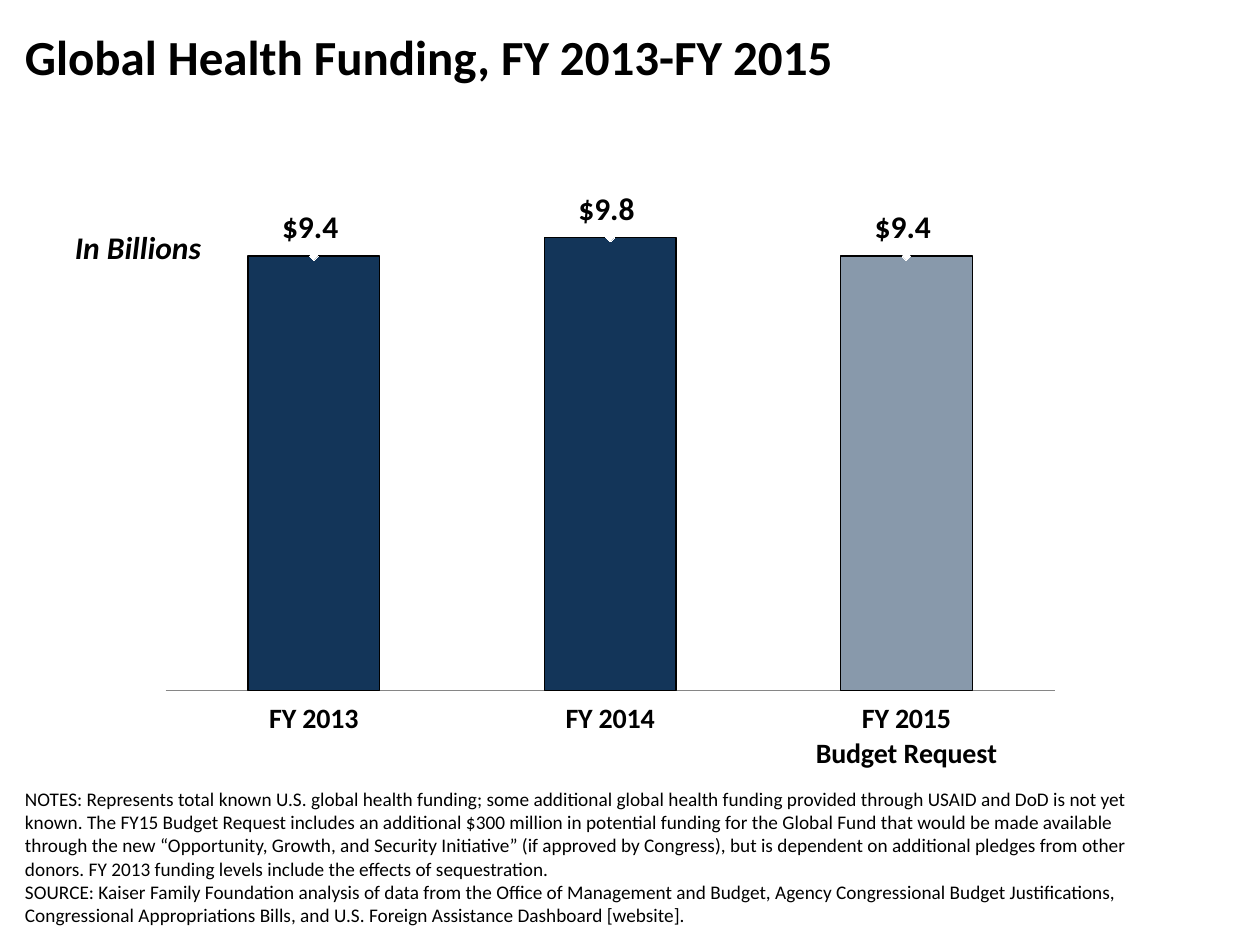
from pptx import Presentation
from pptx.chart.data import CategoryChartData
from pptx.dml.color import RGBColor
from pptx.enum.chart import (XL_CHART_TYPE, XL_LABEL_POSITION, XL_MARKER_STYLE,
                             XL_TICK_LABEL_POSITION, XL_TICK_MARK)
from pptx.enum.text import MSO_ANCHOR, PP_ALIGN
from pptx.oxml import parse_xml
from pptx.oxml.ns import nsdecls, qn
from pptx.util import Inches, Pt

STACKED = XL_CHART_TYPE.COLUMN_STACKED
ABOVE = XL_LABEL_POSITION.ABOVE
AUTO = XL_MARKER_STYLE.AUTOMATIC
NO_TICK = XL_TICK_MARK.NONE
LOW = XL_TICK_LABEL_POSITION.LOW
TOP, BOTTOM = MSO_ANCHOR.TOP, MSO_ANCHOR.BOTTOM
LEFT, CENTER = PP_ALIGN.LEFT, PP_ALIGN.CENTER

FONT = "Calibri"
COLORS = {"ink": "000000", "navy": "133559", "axis": "868686"}
MONEY = '"$"#,##0.0_);[Red]\\("$"#,##0.0\\)'
COLS, ROWS = 100, 75
YEARS = ["FY 2013", "FY 2014", "FY 2015\nBudget Request"]
FUNDS = [9.4, 9.8, 9.4]
FRAME = {"x": 0.13, "y": 0.06, "w": 0.72, "h": 0.8}
NOTES = [
    "NOTES: Represents total known U.S. global health funding; some additional "
    "global health funding provided through USAID and DoD is not yet known. The "
    "FY15 Budget Request includes an additional $300 million in potential funding "
    "for the Global Fund that would be made available through the new “Opportunity, "
    "Growth, and Security Initiative” (if approved by Congress), but is dependent on "
    "additional pledges from other donors. FY 2013 funding levels include the "
    "effects of sequestration.",
    "SOURCE: Kaiser Family Foundation analysis of data from the Office of Management "
    "and Budget, Agency Congressional Budget Justifications, Congressional "
    "Appropriations Bills, and U.S. Foreign Assistance Dashboard [website].",
]


def color(name):
    return RGBColor.from_string(COLORS[name])


def write(frame, lines, size=18, bold=False, italic=False, align=LEFT):
    for i, line in enumerate(lines):
        para = frame.add_paragraph() if i else frame.paragraphs[0]
        para.alignment = align
        run = para.add_run()
        run.text = line
        font = run.font
        font.name, font.size = FONT, Pt(size)
        font.bold, font.italic = bold, italic
        font.color.rgb = color("ink")


class Deck:
    """Hold the style and the current slide, and draw on a grid."""

    def __init__(self):
        self.file = Presentation()
        self.file.slide_width, self.file.slide_height = Inches(10), Inches(7.5)
        self.slide = self.file.slides.add_slide(self.file.slide_layouts[6])

    def area(self, col, row, wide, high):
        x, y = self.file.slide_width / COLS, self.file.slide_height / ROWS
        return int(col * x), int(row * y), int(wide * x), int(high * y)

    def text(self, area, lines, wrap=True, anchor=TOP, **style):
        frame = self.slide.shapes.add_textbox(*self.area(*area)).text_frame
        frame.word_wrap, frame.vertical_anchor = wrap, anchor
        write(frame, lines, **style)

    def chart(self, area):
        data = CategoryChartData(number_format=MONEY)
        data.categories = YEARS
        for name in ("Series 1", "Series 2"):
            data.add_series(name, FUNDS)
        shape = self.slide.shapes.add_chart(STACKED, *self.area(*area), data)
        chart = shape.chart
        chart.has_legend = chart.has_title = False
        chart.font.name, chart.font.size = FONT, Pt(18)
        chart.font.color.rgb = color("ink")
        self.axes(chart)
        self.split(chart)
        self.bars(chart.plots[0])
        self.labels(chart.plots[1].series[0])

    def axes(self, chart):
        years, funds = chart.category_axis, chart.value_axis
        years.major_tick_mark = years.minor_tick_mark = NO_TICK
        years.tick_label_position = LOW
        years.tick_labels.font.size = Pt(16)
        years.tick_labels.font.bold = True
        years.format.line.color.rgb = color("axis")
        funds.minimum_scale, funds.maximum_scale = 0, 12
        funds.has_major_gridlines = funds.visible = False

    def split(self, chart):
        bars = chart.plots[0]._element
        plot = bars.getparent()
        ser = bars.findall(qn("c:ser"))[1]
        for flag in ser.findall(qn("c:invertIfNegative")):
            ser.remove(flag)
        ids = "".join(f'<c:axId val="{a.get("val")}"/>'
                      for a in bars.findall(qn("c:axId")))
        line = parse_xml(
            f'<c:lineChart {nsdecls("c")}><c:grouping val="standard"/>'
            f'<c:varyColors val="0"/><c:marker val="1"/>{ids}</c:lineChart>')
        line.insert(2, ser)
        bars.addnext(line)
        for old in plot.findall(qn("c:layout")):
            plot.remove(old)
        modes = "".join(f'<c:{k}Mode val="edge"/>' for k in "xy")
        sizes = "".join(f'<c:{k} val="{v}"/>' for k, v in FRAME.items())
        plot.insert(0, parse_xml(
            f'<c:layout {nsdecls("c")}><c:manualLayout>'
            f'<c:layoutTarget val="inner"/>{modes}{sizes}'
            f'</c:manualLayout></c:layout>'))

    def bars(self, plot):
        plot.gap_width, plot.overlap = 125, 100
        plot.vary_by_categories = False
        bars = plot.series[0]
        last = bars.points[len(YEARS) - 1]
        for part in (bars, last):
            part.format.fill.solid()
            part.format.fill.fore_color.rgb = color("navy")
            part.format.line.color.rgb = color("ink")
            part.format.line.width = Pt(0.75)
        tone = last.format.fill._xPr.find(".//" + qn("a:srgbClr"))
        tone.append(parse_xml(f'<a:alpha {nsdecls("a")} val="50000"/>'))

    def labels(self, line):
        line.smooth = False
        line.format.line.fill.background()
        line.marker.style, line.marker.size = AUTO, 5
        line.marker.format.fill.background()
        line.marker.format.line.fill.background()
        tags = line.data_labels
        tags.show_value, tags.position = True, ABOVE
        tags.number_format, tags.number_format_is_linked = MONEY, False
        tags.font.name, tags.font.size, tags.font.bold = FONT, Pt(18), True
        tags.font.color.rgb = color("ink")


def main():
    deck = Deck()
    deck.chart((0.4, 7.5, 98, 55))
    deck.text((1, 1.6, 98, 10), ["Global Health Funding, FY 2013-FY 2015"],
              size=28, bold=True)
    deck.text((4.9, 17.6, 12.1, 4), ["In Billions"], wrap=False,
              bold=True, italic=True, align=CENTER)
    deck.text((1, 68, 91, 6), NOTES, anchor=BOTTOM, size=11)
    deck.file.save("out.pptx")


if __name__ == "__main__":
    main()
